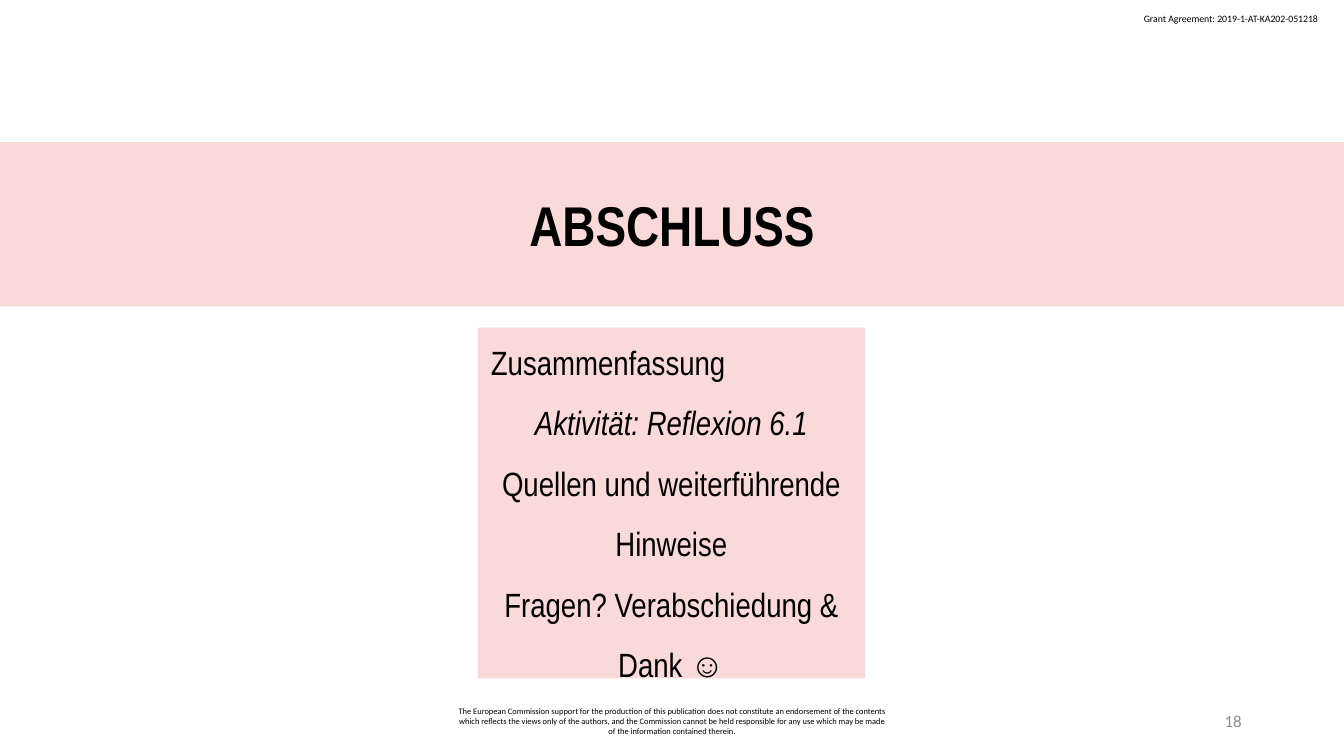
from pptx import Presentation
from pptx.dml.color import RGBColor
from pptx.enum.shapes import MSO_SHAPE
from pptx.enum.text import MSO_ANCHOR, PP_ALIGN
from pptx.util import Pt

BLACK = RGBColor(0x00, 0x00, 0x00)
GRAY = RGBColor(0x8C, 0x8C, 0x8C)
PINK = RGBColor(0xF9, 0xDA, 0xD9)

TITLE = {"name": "Arial Narrow", "size": Pt(40), "bold": True}
BODY = {"name": "Arial Narrow", "size": Pt(24), "bold": False}
GRANT = {"name": "Calibri", "size": Pt(7)}
DISCLAIMER = {"name": "Calibri", "size": Pt(6)}
NUMBER = {"name": "Calibri", "size": Pt(12)}

AGENDA = [
    ("Zusammenfassung", PP_ALIGN.LEFT, False),
    ("Aktivität: Reflexion 6.1", PP_ALIGN.CENTER, True),
    ("Quellen und weiterführende Hinweise", PP_ALIGN.CENTER, False),
    ("Fragen? Verabschiedung & Dank ☺", PP_ALIGN.CENTER, False),
]


def place(sp, left, top, width, height):
    box = {"left": left, "top": top, "width": width, "height": height}
    for name, value in box.items():
        setattr(sp, name, Pt(value))


def fill_pink(sp):
    sp.fill.solid()
    sp.fill.fore_color.rgb = PINK
    sp.line.fill.background()


def format_frame(tf, anchor, side=7.2, edge=3.6, wrap=True):
    values = {
        "word_wrap": wrap,
        "vertical_anchor": anchor,
        "margin_left": Pt(side),
        "margin_right": Pt(side),
        "margin_top": Pt(edge),
        "margin_bottom": Pt(edge),
    }
    for name, value in values.items():
        setattr(tf, name, value)


def write(p, text, font, align, color=BLACK):
    p.alignment = align
    r = p.add_run()
    r.text = text
    for name, value in font.items():
        setattr(r.font, name, value)
    r.font.color.rgb = color
    return r


def add_title(s, text):
    sp = s.shapes.title
    place(sp, 0, 101.5, 960, 117.4)
    fill_pink(sp)
    format_frame(sp.text_frame, MSO_ANCHOR.MIDDLE, 9.4, 5)
    write(sp.text_frame.paragraphs[0], text, TITLE, PP_ALIGN.CENTER)


def add_agenda(s, items):
    sp = s.shapes.add_shape(MSO_SHAPE.RECTANGLE, 0, 0, 0, 0)
    place(sp, 341.3, 234, 276.5, 250.6)
    sp.shadow.inherit = False
    fill_pink(sp)
    tf = sp.text_frame
    format_frame(tf, MSO_ANCHOR.MIDDLE, 9.4, 5)
    for i, (text, align, italic) in enumerate(items):
        p = tf.add_paragraph() if i else tf.paragraphs[0]
        p.line_spacing = 1.5
        write(p, text, BODY, align).font.italic = italic


def add_label(s, box, text, font, align, color=BLACK,
              anchor=MSO_ANCHOR.MIDDLE, wrap=True):
    sp = s.shapes.add_textbox(0, 0, 0, 0)
    place(sp, *box)
    format_frame(sp.text_frame, anchor, wrap=wrap)
    write(sp.text_frame.paragraphs[0], text, font, align, color)


def main():
    prs = Presentation()
    prs.slide_width, prs.slide_height = Pt(960), Pt(540)
    s = prs.slides.add_slide(prs.slide_layouts[5])
    add_title(s, "ABSCHLUSS")
    add_agenda(s, AGENDA)
    add_label(s, (810, 5.8, 141.8, 15.8),
              "Grant Agreement: 2019-1-AT-KA202-051218",
              GRANT, PP_ALIGN.LEFT, anchor=MSO_ANCHOR.TOP, wrap=False)
    add_label(s, (318, 500.5, 324, 28.8),
              "The European Commission support for the production of this "
              "publication does not constitute an endorsement of the contents "
              "which reflects the views only of the authors, and the Commission "
              "cannot be held responsible for any use which may be made of the "
              "information contained therein.",
              DISCLAIMER, PP_ALIGN.CENTER)
    add_label(s, (678, 500.5, 216, 28.8), "18", NUMBER, PP_ALIGN.RIGHT, GRAY)
    prs.save("out.pptx")


if __name__ == "__main__":
    main()
